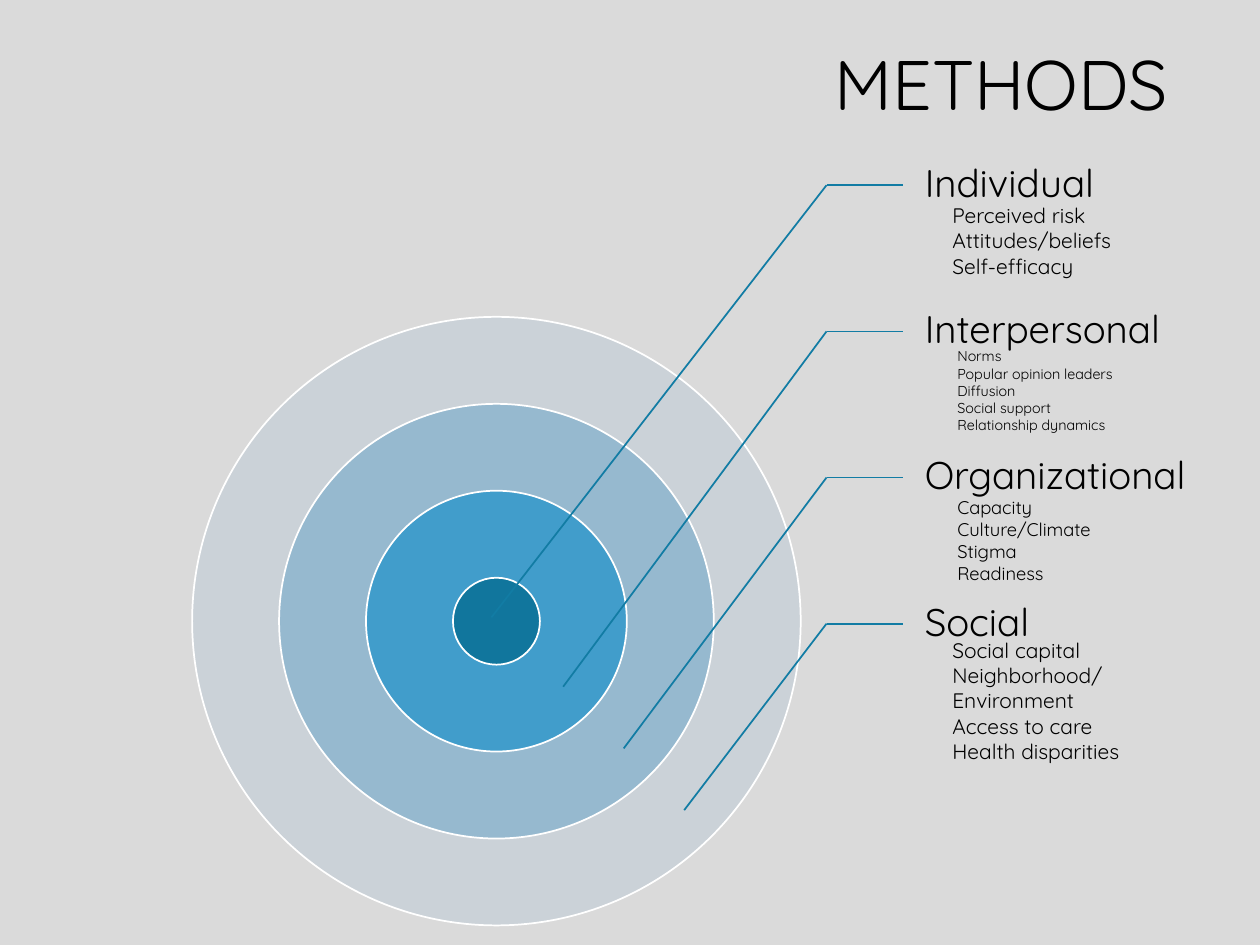
from lxml.etree import SubElement
from pptx import Presentation
from pptx.dml.color import RGBColor
from pptx.enum.shapes import MSO_CONNECTOR as Connector, MSO_SHAPE as Shape
from pptx.enum.text import MSO_ANCHOR as Anchor, MSO_AUTO_SIZE as AutoSize, PP_ALIGN as Align
from pptx.oxml.ns import qn
from pptx.util import Inches, Pt

COLORS = {"page": "DADADA", "text": "000000", "ring": "FFFFFF", "callout": "127CA4"}
FONT = "Quicksand"


def fill_text(shape, lines, size, frame_format, para_format):
    """Write one paragraph per line and apply the given formats."""
    frame = shape.text_frame
    frame.text = "\n".join(lines)
    for name, value in frame_format.items():
        setattr(frame, name, value)
    for para in frame.paragraphs:
        for name, value in para_format.items():
            setattr(para, name, value)
        for span in para.runs:
            span.font.name, span.font.size = FONT, Pt(size)
            span.font.color.rgb = RGBColor.from_string(COLORS["text"])


def add_line(page, start, end):
    """Draw one straight piece of a callout."""
    line = page.shapes.add_connector(
        Connector.STRAIGHT, *(Inches(value) for value in (*start, *end)))
    line.line.color.rgb = RGBColor.from_string(COLORS["callout"])
    line.line.width = Pt(1)
    SubElement(line._element.spPr, qn("a:effectLst"))


deck = Presentation()
deck.slide_width, deck.slide_height = Inches(10), Inches(7.5)
page = deck.slides.add_slide(deck.slide_layouts[5])
page.background.fill.solid()
page.background.fill.fore_color.rgb = RGBColor.from_string(COLORS["page"])

# Title
title = page.shapes.title
title.left, title.top, title.width, title.height = (
    Inches(value) for value in (2.4, -0.01, 6.97, 1.41))
fill_text(title, ["METHODS"], 40,
          {"vertical_anchor": Anchor.MIDDLE, "auto_size": AutoSize.NONE, "word_wrap": True},
          {"alignment": Align.RIGHT, "line_spacing": 0.9})

# Concentric circles, largest first: fill and opacity in percent
CENTER_X, CENTER_Y, CORE = 3.94, 4.93, 0.69
rings = [("BDCCD8", 50), ("7CADCC", 67), ("3098CB", 83), ("11769D", 100)]
for index, (color, opacity) in enumerate(rings):
    size = CORE * (7 - 2 * index)
    circle = page.shapes.add_shape(
        Shape.OVAL, Inches(CENTER_X - size / 2), Inches(CENTER_Y - size / 2),
        Inches(size), Inches(size))
    circle.shadow.inherit = False
    circle.fill.solid()
    circle.fill.fore_color.rgb = RGBColor.from_string(color)
    circle.line.color.rgb = RGBColor.from_string(COLORS["ring"])
    circle.line.width = Pt(1)
    if opacity < 100:
        fill_color = circle._element.spPr.find(qn("a:solidFill"))[0]
        SubElement(fill_color, qn("a:alpha"), val=str(opacity * 1000))

# Levels: heading, callout target, list position and width, list size, list lines
levels = [
    ("Individual", (3.9, 4.9), (7.46, 1.56, 1.75, 0.71), 12,
     ["Perceived risk", "Attitudes/beliefs", "Self-efficacy"]),
    ("Interpersonal", (4.47, 5.45), (7.5, 2.71, 1.88, 0.8), 8.2,
     ["Norms", "Popular opinion leaders", "Diffusion", "Social support",
      "Relationship dynamics"]),
    ("Organizational", (4.95, 5.94), (7.5, 3.89, 1.75, 0.81), 10.5,
     ["Capacity", "Culture/Climate", "Stigma", "Readiness"]),
    ("Social", (5.43, 6.43), (7.46, 5.01, 1.75, 1.11), 12,
     ["Social capital", "Neighborhood/", "Environment", "Access to care",
      "Health disparities"]),
]
ELBOW_X, HEADING_X, HEADING_WIDTH = 6.56, 7.17, 2.43
FIRST_ROW, ROW = 0.89, 1.16
heading_format = {
    "vertical_anchor": Anchor.MIDDLE, "word_wrap": True,
    "margin_left": Inches(0.17), "margin_right": Inches(0.03),
    "margin_top": Inches(0.03), "margin_bottom": Inches(0.03)}
for row, (heading, target, area, size, lines) in enumerate(levels):
    top = FIRST_ROW + row * ROW
    middle = top + ROW / 2

    # Heading with its callout
    box = page.shapes.add_textbox(
        Inches(HEADING_X), Inches(top), Inches(HEADING_WIDTH), Inches(ROW))
    fill_text(box, [heading], 22, heading_format, {"line_spacing": 0.9})
    add_line(page, (ELBOW_X, middle), (HEADING_X, middle))
    add_line(page, (ELBOW_X, middle), target)

    # Factors at this level
    factors = page.shapes.add_textbox(*(Inches(value) for value in area))
    fill_text(factors, lines, size,
              {"word_wrap": True, "auto_size": AutoSize.SHAPE_TO_FIT_TEXT}, {})

deck.save("out.pptx")
